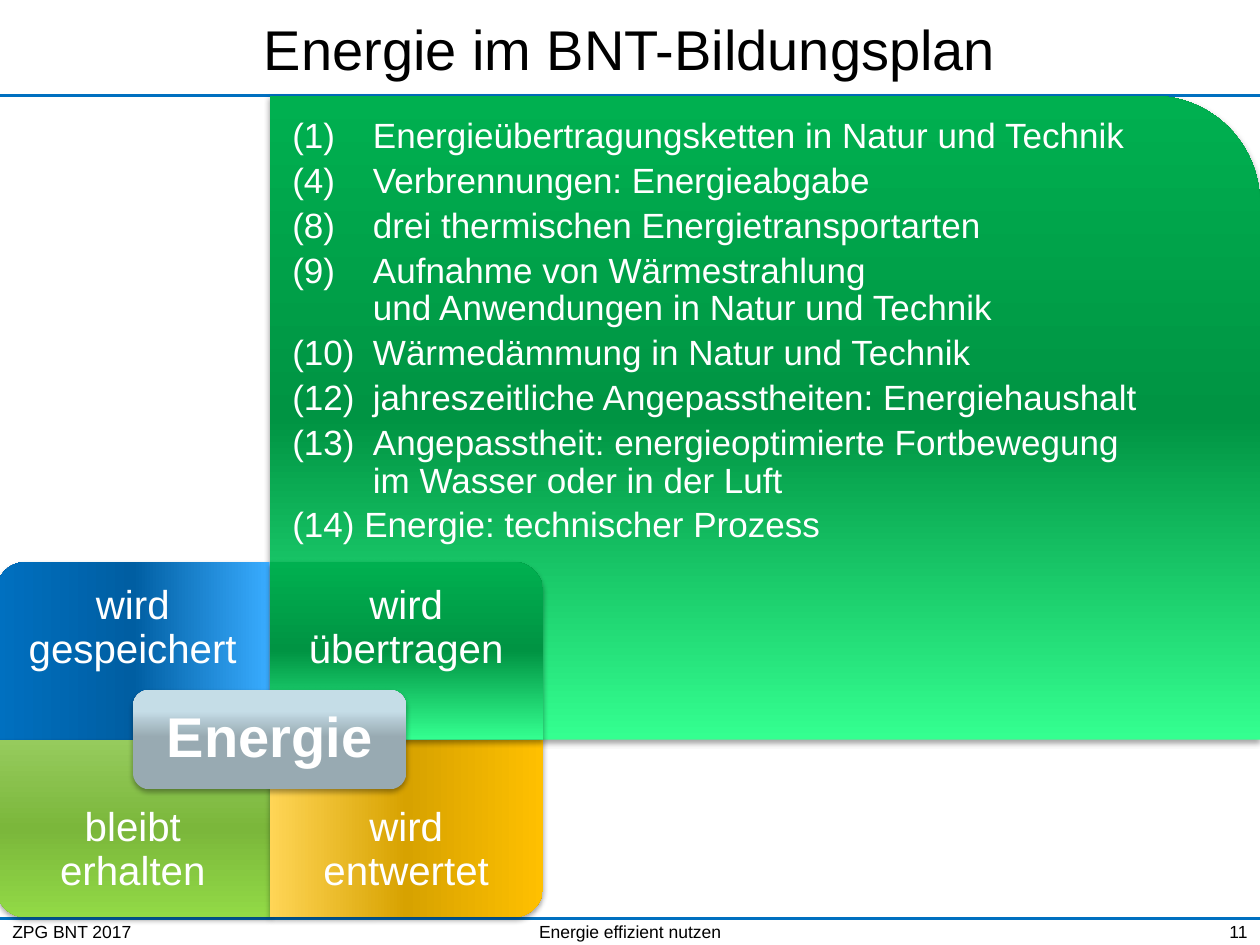
from dataclasses import dataclass
from typing import NamedTuple

from lxml.etree import SubElement
from pptx import Presentation
from pptx.dml.color import RGBColor
from pptx.enum.shapes import MSO_CONNECTOR as Line, MSO_SHAPE as Preset
from pptx.enum.text import MSO_ANCHOR as Anchor, PP_ALIGN as Align
from pptx.oxml.ns import qn
from pptx.util import Inches, Pt


@dataclass(frozen=True)
class Theme:
    """Colours, gradients and type sizes of the slide."""
    font: str = "Arial"
    ink: str = "000000"
    light: str = "FFFFFF"
    rule: str = "0070C0"
    green: tuple = ((0, "34FF90"), (50, "009443"), (100, "00B050"))
    blue: tuple = ((0, "39ACFF"), (50, "005EA2"), (100, "0070C0"))
    lime: tuple = ((0, "96CB5D"), (50, "7BB73B"), (100, "92DA46"))
    amber: tuple = ((0, "FFD556"), (50, "D7A200"), (100, "FFC000"))
    grey: tuple = ((53, "98AAB2"), (79, "C5DDE7"), (100, "C6DEE9"))
    title: int = 32
    tile: int = 23
    body: int = 20
    small: int = 10


class Box(NamedTuple):
    """A rectangle in inches."""
    left: float
    top: float
    width: float
    height: float

    def share(self, left, top, width, height):
        """Return the part of this box given by shares of its size."""
        return Box(self.left + left * self.width, self.top + top * self.height,
                   width * self.width, height * self.height)

    def lengths(self):
        """Return the four lengths for python-pptx."""
        return [Inches(value) for value in self]


THEME = Theme()
SLIDE = Box(0, 0, 10, 7.5)
HEAD = Box(0, 0, 10, 0.76)
FOOT = Box(0, 7.29, 10, 0.21)
MATRIX = Box(-0.03, 4.46, 4.34, 2.82)
PANEL = Box(2.14, 0.76, 7.86, 5.11)

TOPICS = (
    "(1)\tEnergieübertragungsketten in Natur und Technik",
    "(4)\tVerbrennungen: Energieabgabe",
    "(8)\tdrei thermischen Energietransportarten",
    "(9)\tAufnahme von Wärmestrahlung\vund Anwendungen in Natur und Technik",
    "(10)\tWärmedämmung in Natur und Technik",
    "(12)\tjahreszeitliche Angepasstheiten: Energiehaushalt",
    "(13)\tAngepasstheit: energieoptimierte Fortbewegung\vim Wasser oder in der Luft",
    "(14) Energie: technischer Prozess",
)
TILES = (
    ("wird gespeichert", THEME.blue, 0, 0, 270),
    ("bleibt erhalten", THEME.lime, 0, 1, 180),
    ("wird entwertet", THEME.amber, 1, 1, 90),
    ("wird übertragen", THEME.green, 1, 0, 0),
)


def write(para, text, size, color, align=Align.LEFT, bold=False):
    """Fill a paragraph run by run, with line breaks between its lines."""
    para.alignment = align
    for number, line in enumerate(text.split("\v")):
        if number:
            para.add_line_break()
        span = para.add_run()
        span.text = line
        span.font.name = THEME.font
        span.font.size = Pt(size)
        span.font.bold = bold
        span.font.color.rgb = RGBColor.from_string(color)


def add_frame(page, box, anchor=Anchor.MIDDLE, inset=None):
    """Add a wrapping text box and return its text frame."""
    frame = page.shapes.add_textbox(*box.lengths()).text_frame
    frame.word_wrap = True
    frame.vertical_anchor = anchor
    if inset is not None:
        frame.margin_left = frame.margin_right = Inches(inset)
        frame.margin_top = frame.margin_bottom = Inches(inset)
    return frame


def add_glossy(page, preset, box, stops, turn=0):
    """Add a gradient shape with a soft shadow that covers the box when turned."""
    if turn % 180:
        middle, centre = box.left + box.width / 2, box.top + box.height / 2
        box = Box(middle - box.height / 2, centre - box.width / 2, box.height, box.width)
    shape = page.shapes.add_shape(preset, *box.lengths())
    shape.rotation = turn
    shape.line.fill.background()
    shape.fill.gradient()
    shape.fill.gradient_angle = 90
    properties = shape._element.spPr
    stop_list = properties.find(qn("a:gradFill")).find(qn("a:gsLst"))
    for stop in list(stop_list):
        stop_list.remove(stop)
    for position, color in stops:
        stop = SubElement(stop_list, qn("a:gs"), pos=str(position * 1000))
        SubElement(stop, qn("a:srgbClr"), val=color)
    shape.shadow.inherit = False
    shadow = SubElement(properties.find(qn("a:effectLst")), qn("a:outerShdw"),
                        blurRad=str(Pt(3.1)), dist=str(Pt(1.8)), dir="5400000", rotWithShape="0")
    tone = SubElement(shadow, qn("a:srgbClr"), val=THEME.ink)
    SubElement(tone, qn("a:alpha"), val="35000")


def add_rule(page, box, height):
    """Draw a rule across the box at a share of its height."""
    top = Inches(box.top + height * box.height)
    rule = page.shapes.add_connector(Line.STRAIGHT, Inches(box.left), top,
                                     Inches(box.left + box.width), top)
    rule.line.color.rgb = RGBColor.from_string(THEME.rule)
    rule.line.width = Pt(1.5)
    SubElement(rule._element.spPr, qn("a:effectLst"))


def add_title(page, box, text):
    """Place the title placeholder in the box."""
    title = page.shapes.title
    title.left, title.top, title.width, title.height = box.lengths()
    title.text_frame.vertical_anchor = Anchor.MIDDLE
    write(title.text_frame.paragraphs[0], text, THEME.title, THEME.ink, Align.CENTER)


def add_panel(page, box, topics):
    """Place the green panel with its numbered topics."""
    add_glossy(page, Preset.ROUND_1_RECTANGLE, box, THEME.green)
    frame = add_frame(page, box.share(0, 0, 1, 0.75), Anchor.TOP, 0.18)
    for number, topic in enumerate(topics):
        para = frame.add_paragraph() if number else frame.paragraphs[0]
        para.line_spacing = 0.9
        para.space_after = Pt(4)
        indent = para._p.get_or_add_pPr()
        indent.set("marL", str(Inches(0.64)))
        indent.set("indent", str(Inches(-0.64)))
        write(para, topic, THEME.body, THEME.light)


def add_label(page, box, text, size, inset, bold=False):
    """Centre a light label in the box."""
    para = add_frame(page, box, inset=inset).paragraphs[0]
    para.line_spacing = 0.9
    write(para, text, size, THEME.light, Align.CENTER, bold)


def add_matrix(page, box, tiles, core):
    """Place two by two tiles around a central plate."""
    for text, stops, column, row, turn in tiles:
        cell = box.share(column / 2, row / 2, 1 / 2, 1 / 2)
        add_glossy(page, Preset.ROUND_1_RECTANGLE, cell, stops, turn)
        add_label(page, cell.share(0, row / 4, 1, 3 / 4), text, THEME.tile, 0.18)
    plate = box.share(0.25, 0.36, 0.5, 0.28)
    add_glossy(page, Preset.ROUNDED_RECTANGLE, plate, THEME.grey)
    add_label(page, plate.share(0.02, 0.05, 0.96, 0.9), core, THEME.title, 0.13, True)


def add_footer(page, box, parts):
    """Place left, centre and right footer texts."""
    places = ((0, 0.27, Align.LEFT), (0.34, 0.32, Align.CENTER), (0.74, 0.26, Align.RIGHT))
    for text, (left, width, align) in zip(parts, places):
        frame = add_frame(page, box.share(left, 0, width, 1))
        write(frame.paragraphs[0], text, THEME.small, THEME.ink, align)


def main():
    """Build and save the deck."""
    deck = Presentation()
    deck.slide_width, deck.slide_height = Inches(SLIDE.width), Inches(SLIDE.height)
    page = deck.slides.add_slide(deck.slide_layouts[5])
    add_rule(page, HEAD, 1)
    add_rule(page, FOOT, 0)
    add_panel(page, PANEL, TOPICS)
    add_title(page, HEAD, "Energie im BNT-Bildungsplan")
    add_footer(page, FOOT, ("ZPG BNT 2017", "Energie effizient nutzen", "11"))
    add_matrix(page, MATRIX, TILES, "Energie")
    deck.save("out.pptx")


if __name__ == "__main__":
    main()
